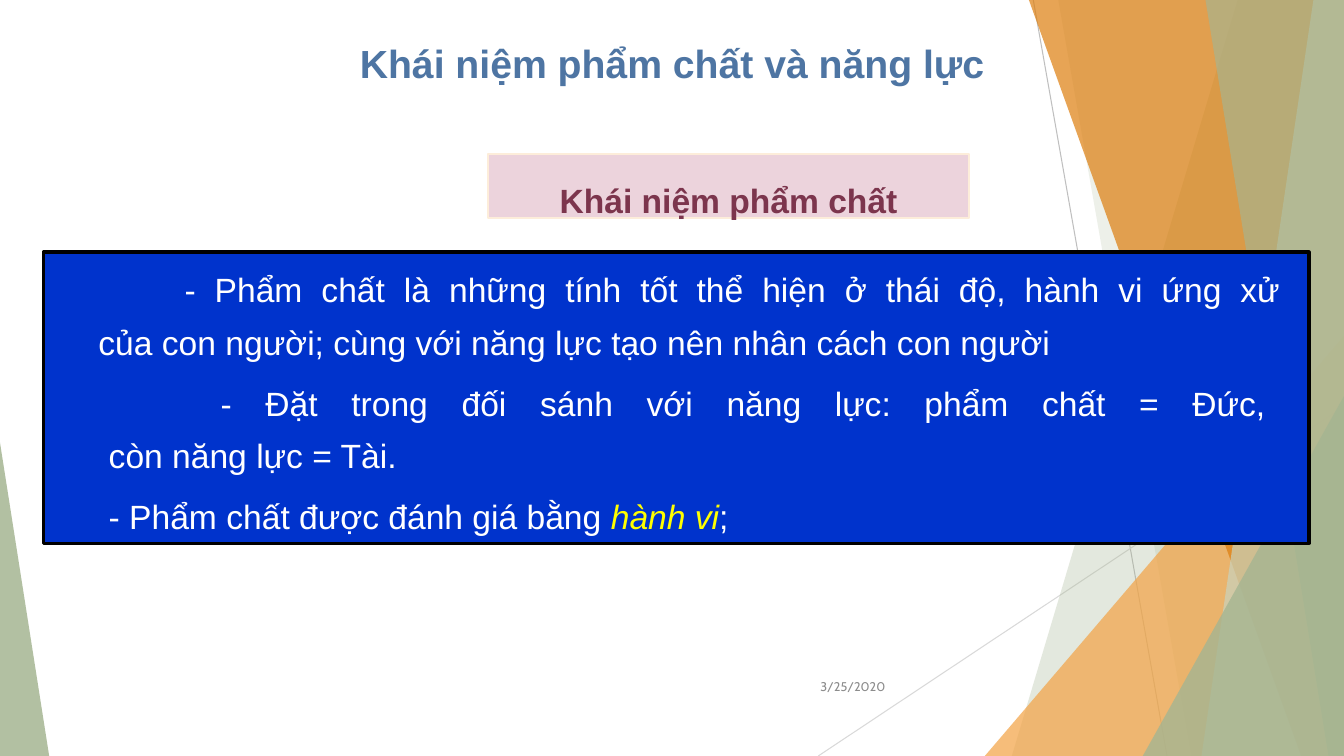
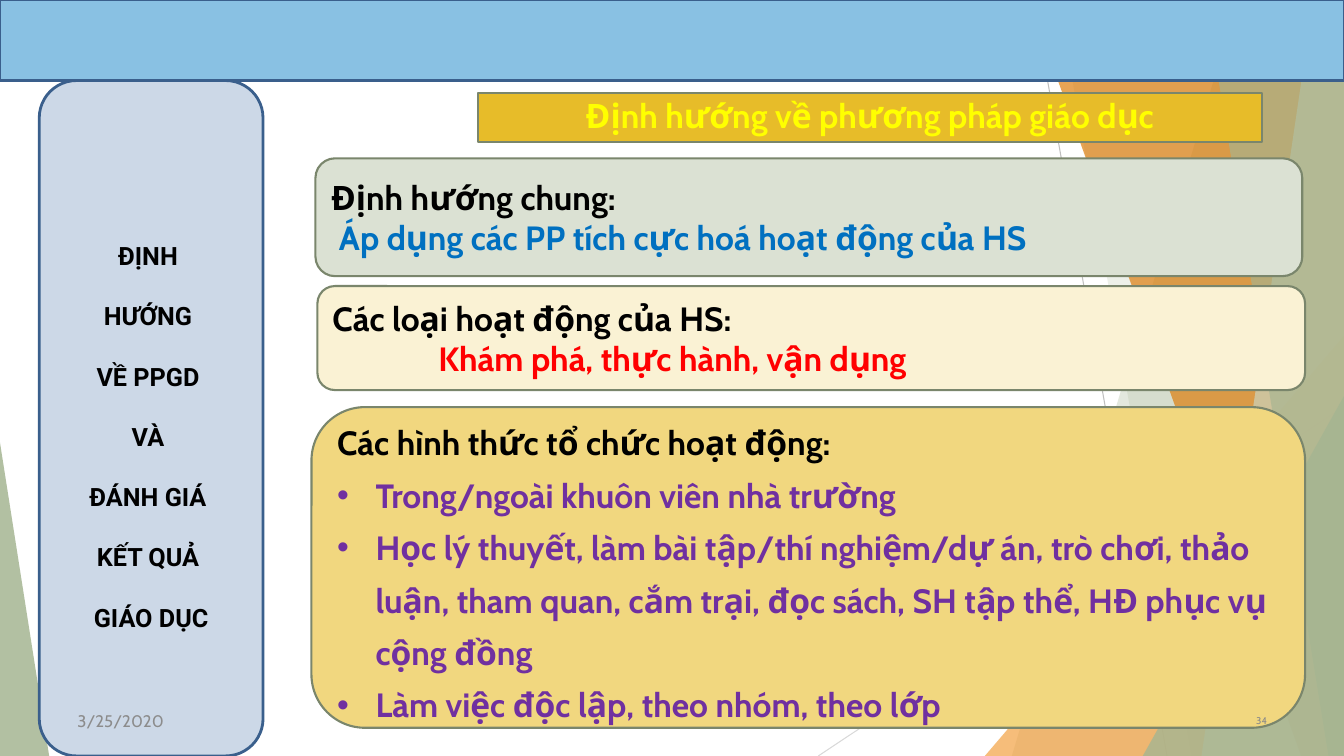
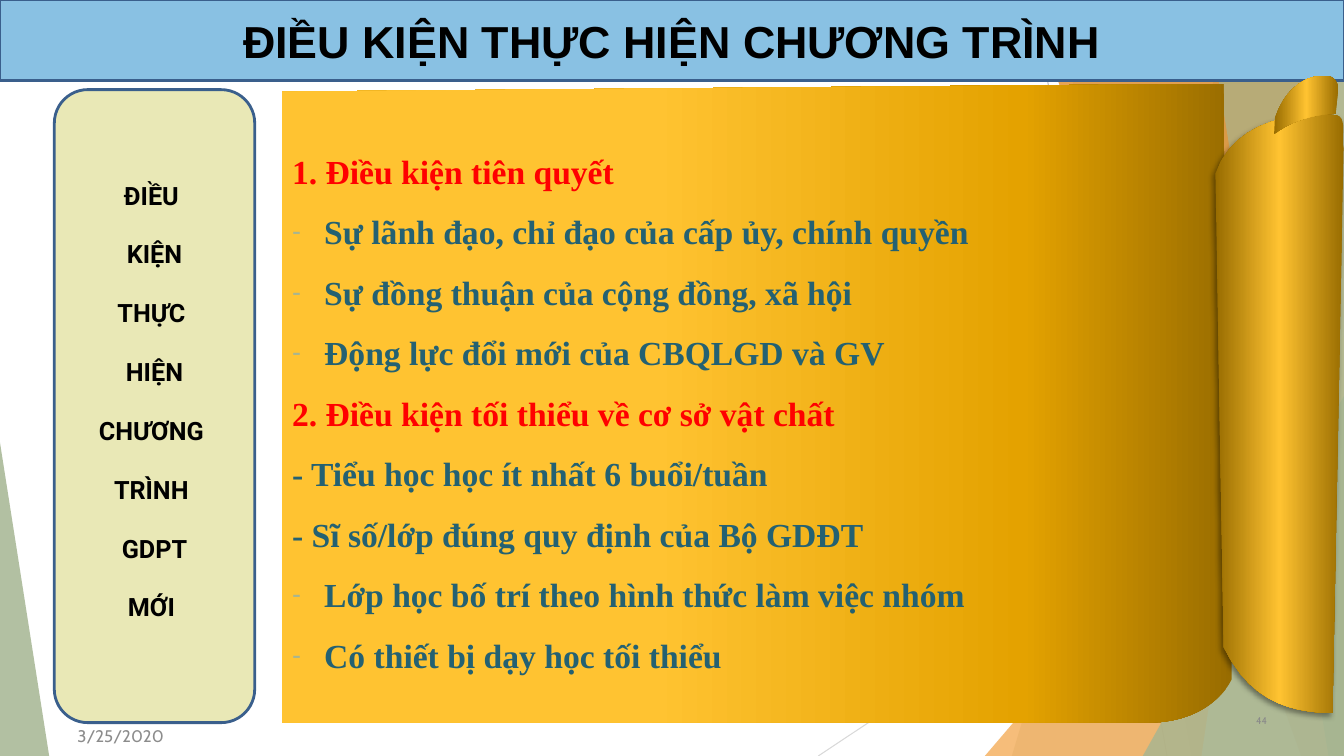
from lxml import etree
from pptx import Presentation
from pptx import util as u
from pptx.dml.color import RGBColor
from pptx.enum import shapes, text
from pptx.oxml.ns import qn

WIDTH, HEIGHT = 33.87, 19.05
GREEN, ORANGE, GOLD, BROWN = "A5B592", "F3A447", "FFC331", "986C00"
SKY, NAVY, OLIVE, PURPLE = "89C1E3", "3A5F8C", "7A866C", "7030A0"
BLACK, WHITE, RED, YELLOW, GREY, TEAL = "000000", "FFFFFF", "FF0000", "FFFF00", "8C8C8C", "246172"
LEFT, CENTER, RIGHT, JUSTIFY = (text.PP_ALIGN.LEFT, text.PP_ALIGN.CENTER,
                                text.PP_ALIGN.RIGHT, text.PP_ALIGN.JUSTIFY)
TOP, MIDDLE = text.MSO_ANCHOR.TOP, text.MSO_ANCHOR.MIDDLE
RECT, ROUND = shapes.MSO_SHAPE.RECTANGLE, shapes.MSO_SHAPE.ROUNDED_RECTANGLE
TRIANGLE = shapes.MSO_SHAPE.ISOSCELES_TRIANGLE
BAND = (0, 0, WIDTH, 2.03)


def rgb(value):
    return RGBColor.from_string(value)


def lengths(values):
    return [u.Cm(value) for value in values]


def add_xml(parent, tag, **attributes):
    return etree.SubElement(parent, qn(tag), {key: str(value) for key, value in attributes.items()})


def add_color(parent, color):
    return add_xml(parent, "a:srgbClr", val=color)


def flatten(outline, steps=12):
    """Turn points and (control, control, end) curves into a list of points."""
    points = []
    for part in outline:
        if not isinstance(part[0], tuple):
            points.append(part)
            continue
        corners = [points[-1], *part]
        for step in range(1, steps + 1):
            t = step / steps
            weights = ((1 - t) ** 3, 3 * t * (1 - t) ** 2, 3 * t * t * (1 - t), t ** 3)
            points.append(tuple(sum(w * corner[axis] for w, corner in zip(weights, corners))
                                for axis in (0, 1)))
    return points


class Deck:
    """Holds the shared style and the slide being built."""

    def __init__(self):
        self.presentation = Presentation()
        self.presentation.slide_width = u.Cm(WIDTH)
        self.presentation.slide_height = u.Cm(HEIGHT)
        self.slide = None

    def new_slide(self):
        layout = self.presentation.slide_layouts[1]
        self.slide = self.presentation.slides.add_slide(layout)

    # Text
    def put_text(self, shape, paragraphs, size=24, font="Arial", color=BLACK, bold=False,
                 anchor=MIDDLE, insets=(0.25, 0.13, 0.25, 0.13), **common):
        frame = shape.text_frame
        left, top, right, bottom = lengths(insets)
        frame_format = {"word_wrap": True, "auto_size": text.MSO_AUTO_SIZE.NONE,
                        "vertical_anchor": anchor, "margin_left": left, "margin_top": top,
                        "margin_right": right, "margin_bottom": bottom}
        for name, value in frame_format.items():
            setattr(frame, name, value)
        for number, (runs, options) in enumerate(paragraphs):
            paragraph = frame.paragraphs[0] if number == 0 else frame.add_paragraph()
            self.format_paragraph(paragraph, **{**common, **options})
            for content, changes in runs:
                if content == "\v":
                    paragraph.add_line_break()
                    continue
                run = paragraph.add_run()
                run.text = content
                style = {"name": font, "size": u.Pt(size), "bold": bold, "italic": False,
                         "color": color, **changes}
                run.font.color.rgb = rgb(style.pop("color"))
                for name, value in style.items():
                    setattr(run.font, name, value)

    def format_paragraph(self, paragraph, align=LEFT, line=1.0, before=0, after=0,
                         margin=0, indent=0, bullet=None, bullet_color=None, bullet_size=100):
        values = {"alignment": align, "line_spacing": line,
                  "space_before": u.Pt(before), "space_after": u.Pt(after)}
        for name, value in values.items():
            setattr(paragraph, name, value)
        properties = paragraph._p.get_or_add_pPr()
        properties.set("marL", str(u.Cm(margin)))
        properties.set("indent", str(u.Cm(indent)))
        if not bullet:
            add_xml(properties, "a:buNone")
            return
        if bullet_color:
            add_color(add_xml(properties, "a:buClr"), bullet_color)
        add_xml(properties, "a:buSzPct", val=bullet_size * 1000)
        add_xml(properties, "a:buFont", typeface="Arial")
        add_xml(properties, "a:buChar", char=bullet)

    # Shapes
    def paint(self, shape, fill, line=None, weight=1.5, alpha=100):
        shape.fill.solid()
        shape.fill.fore_color.rgb = rgb(fill)
        if alpha < 100:
            solid = shape._element.spPr.find(qn("a:solidFill"))
            add_xml(solid[0], "a:alpha", val=alpha * 1000)
        if line:
            shape.line.color.rgb = rgb(line)
            shape.line.width = u.Pt(weight)
        else:
            shape.line.fill.background()

    def box(self, kind, place, fill, line=None, weight=1.5, alpha=100):
        shape = self.slide.shapes.add_shape(kind, *lengths(place))
        self.paint(shape, fill, line, weight, alpha)
        shape.shadow.inherit = False
        return shape

    def triangle(self, place, fill, alpha, apex):
        shape = self.box(TRIANGLE, place, fill, alpha=alpha)
        shape.adjustments[0] = apex

    def outline(self, points, fill, alpha=100):
        start, *rest = [tuple(lengths(point)) for point in flatten(points)]
        builder = self.slide.shapes.build_freeform(*start)
        builder.add_line_segments(rest, close=True)
        shape = builder.convert_to_shape()
        self.paint(shape, fill, alpha=alpha)
        shape.shadow.inherit = False
        return shape

    def gradient(self, points, stops):
        shape = self.outline(points, stops[0][1])
        properties = shape._element.spPr
        solid = properties.find(qn("a:solidFill"))
        fill = etree.Element(qn("a:gradFill"), rotWithShape="1")
        stop_list = add_xml(fill, "a:gsLst")
        for position, color in stops:
            add_color(add_xml(stop_list, "a:gs", pos=position * 1000), color)
        add_xml(fill, "a:lin", ang=180 * 60000, scaled=0)
        properties.replace(solid, fill)
        return shape

    def drop_shadow(self, shape):
        effects = shape._element.spPr.find(qn("a:effectLst"))
        shadow = add_xml(effects, "a:outerShdw", blurRad=u.Pt(4), dist=u.Pt(3),
                         dir=135 * 60000, rotWithShape=0)
        add_xml(add_color(shadow, BLACK), "a:alpha", val=40000)

    def line(self, ends, color):
        connector = self.slide.shapes.add_connector(shapes.MSO_CONNECTOR.STRAIGHT, *lengths(ends))
        connector.line.color.rgb = rgb(color)
        connector.line.width = u.Pt(0.75)
        add_xml(connector._element.spPr, "a:effectLst")

    def placeholder(self, index, place, geometry="rect"):
        """Move a template placeholder and bring it to the front."""
        shape = self.slide.placeholders[index]
        for name, value in zip(("left", "top", "width", "height"), lengths(place)):
            setattr(shape, name, value)
        outline = add_xml(shape._element.spPr, "a:prstGeom", prst=geometry)
        add_xml(outline, "a:avLst")
        self.slide.shapes._spTree.append(shape._element)
        return shape

    # Shared parts
    def backdrop(self):
        """Draw the slanted bands and hand them to the slide master."""
        first = len(self.slide.shapes)
        self.line((26.04, 0, 29.41, HEIGHT), "BFBFBF")
        self.line((WIDTH, 10.24, 20.62, HEIGHT), "D9D9D9")
        self.slant(31.19, 25.5, GREEN, 30)
        self.slant(26.67, 30.02, GREEN, 20)
        self.triangle((24.82, 8.46, 9.05, 10.59), ORANGE, 72, 1)
        self.slant(25.93, 32.79, "DD7E0E", 70)
        self.slant(33.1, 30.28, "C9D3BE", 70)
        self.slant(30.38, 33.48, GREEN, 65)
        self.triangle((28.8, 9.98, 5.07, 9.07), GREEN, 80, 1)
        self.triangle((0, 11.15, 1.24, 7.9), GREEN, 85, 0)
        master = self.presentation.slide_master.shapes._spTree
        for number, shape in enumerate(list(self.slide.shapes)[first:], 101):
            shape._element.xpath(".//p:cNvPr")[0].set("id", str(number))
            master.append(shape._element)

    def slant(self, top, bottom, fill, alpha):
        self.outline([(top, 0), (WIDTH, 0), (WIDTH, HEIGHT), (bottom, HEIGHT)], fill, alpha)

    def sidebar(self, place, fill, words, pitch, insets):
        shape = self.box(ROUND, place, fill, NAVY, 2)
        self.put_text(shape, [plain(word) for word in words], size=18, font="Roboto", bold=True,
                      insets=insets, align=CENTER, line=u.Pt(pitch), before=6, after=6)

    def small_text(self, content, place, size=12, color=GREY, align=LEFT):
        shape = self.slide.shapes.add_textbox(*lengths(place))
        self.put_text(shape, [plain(content)], size=size, font="Cabin", color=color, align=align)

    def page_number(self, content):
        self.small_text(content, (24.28, 17.65, 7.9, 1.02), 7, "898989", RIGHT)


def plain(content, color=None, **options):
    """One paragraph of one run."""
    return [(content, {"color": color} if color else {})], options


def quality_slide(deck):
    deck.small_text("3/25/2020", (20.02, 16.79, 2.54, 1.02), 9, align=RIGHT)
    title = deck.placeholder(0, (0, 0.86, WIDTH, 1.45))
    deck.put_text(title, [plain("Khái niệm phẩm chất và năng lực")], size=28, color="4E75A3",
                  bold=True, anchor=TOP, align=CENTER)

    # Definition
    body = deck.placeholder(1, (1.09, 6.35, 31.9, 7.34))
    deck.paint(body, "0033CC", BLACK, 2.25)
    deck.put_text(body, [
        ([("- Phẩm chất là những tính tốt thể hiện ở thái độ, hành vi ứng xử ", {}), ("\v", {}),
          ("của con người; cùng với năng lực tạo nên nhân cách con người", {})],
         {"margin": 1.14, "indent": 2.17}),
        ([("- Đặt trong đối sánh với năng lực: phẩm chất = Đức, ", {}), ("\v", {}),
          ("còn năng lực = Tài.", {})], {"margin": 1.4, "indent": 2.82}),
        ([("- Phẩm chất được đánh giá bằng ", {}),
          ("hành vi", {"color": YELLOW, "italic": True}), (";", {})], {"margin": 1.4}),
    ], color=WHITE, anchor=TOP, align=JUSTIFY, line=1.3, before=6)

    # Heading label
    label = deck.box(RECT, (12.29, 3.89, 12.14, 1.6), "ECD3DC", "FDEDDA")
    deck.put_text(label, [plain("Khái niệm phẩm chất")], color="7C354D", bold=True, anchor=TOP,
                  align=CENTER, line=1.5, before=2, after=6)


def method_slide(deck):
    style = {"font": "Cabin", "bold": True}
    deck.box(RECT, BAND, SKY, NAVY, 2)
    deck.sidebar((0.99, 2.03, 5.64, 17.02), "CCD8E7",
                 ["ĐỊNH ", "HƯỚNG ", "VỀ PPGD ", "VÀ ", "ĐÁNH GIÁ ", "KẾT QUẢ ", "GIÁO DỤC"],
                 31, (0, 0.71, 0, 0.13))

    # Title and general direction
    title = deck.placeholder(0, (12.04, 2.34, 19.76, 1.24), "roundRect")
    deck.paint(title, "E7BC29", OLIVE)
    deck.put_text(title, [plain("Định hướng về phương pháp giáo dục")], color=YELLOW,
                  align=CENTER, line=0.9, before=10, **style)
    cards = [
        ((7.95, 3.99, 24.87, 2.97), "DBE1D3", "Định hướng chung:",
         "Áp dụng các PP tích cực hoá hoạt động của HS", "0070C0", 0.2),
        ((8, 7.21, 24.89, 2.62), "FAF2D4", "Các loại hoạt động của HS:",
         "Khám phá, thực hành, vận dụng", RED, 2.67),
    ]
    for place, fill, heading, detail, color, indent in cards:
        card = deck.box(ROUND, place, fill, OLIVE)
        deck.put_text(card, [plain(heading), plain(detail, color, indent=indent)], **style)

    # Forms of activity
    forms = ["Trong/ngoài khuôn viên nhà trường",
             "Học lý thuyết, làm bài tập/thí nghiệm/dự án, trò chơi, thảo luận, tham quan, "
             "cắm trại, đọc sách, SH tập thể, HĐ phục vụ cộng đồng",
             "Làm việc độc lập, theo nhóm, theo lớp"]
    body = deck.placeholder(1, (7.85, 10.26, 25.04, 8.08), "roundRect")
    deck.paint(body, "F1D77F", OLIVE)
    deck.put_text(body, [plain("Các hình thức tổ chức hoạt động:")]
                  + [plain(form, PURPLE, margin=0.97, indent=-0.97, bullet="•") for form in forms],
                  line=1.3, **style)
    deck.small_text("3/25/2020", (1.7, 17.65, 7.9, 1.02))
    deck.page_number("34")


def condition_slide(deck):
    title = deck.placeholder(0, BAND)
    deck.paint(title, SKY, NAVY, 2)
    deck.put_text(title, [plain("ĐIỀU KIỆN THỰC HIỆN CHƯƠNG TRÌNH")], size=32, bold=True,
                  align=CENTER)
    deck.sidebar((1.37, 2.26, 5.05, 15.95), "E9E8B6",
                 ["ĐIỀU ", "KIỆN", "THỰC ", "HIỆN", "CHƯƠNG ", "TRÌNH ", "GDPT", "MỚI "],
                 30, (0, 0.13, 0, 0.69))

    # Scroll: sheet, roll and curl
    deck.gradient([(7.11, 2.31), (7.11, 18.21), (29.01, 18.21),
                   ((30.15, 18.19), (30.81, 17.6), (31.04, 17.12)),
                   ((31.04, 12.09), (30.84, 7.14), (30.84, 2.11))],
                  [(0, BROWN), (22, "E4A200"), (61, GOLD), (100, GOLD)])
    rolled = [(0, BROWN), (50, GOLD), (100, BROWN)]
    roll = deck.gradient([(33.58, 17.98), ((32.82, 17.93), (31.6, 17.88), (30.84, 16.31)),
                          (30.63, 4.37), ((31.14, 2.97), (32.79, 2.82), (33.63, 2.9)),
                          ((33.99, 2.92), (33.78, 3.45), (33.86, 3.73))], rolled)
    deck.drop_shadow(roll)
    deck.gradient([(32.11, 3.38), (32.13, 2.97), ((32.49, 1.96), (33.2, 1.88), (33.45, 1.91)),
                   ((33.58, 1.93), (33.71, 2.03), (33.73, 2.21)), (33.66, 2.87),
                   ((33.28, 2.87), (32.64, 2.97), (32.11, 3.38))], rolled)

    # Conditions
    dash = {"margin": 0.81, "indent": -0.81, "bullet": "-", "bullet_color": GREEN,
            "bullet_size": 80}
    body = deck.placeholder(1, (7.11, 2.11, 23.93, 16.08))
    deck.put_text(body, [
        plain("1. Điều kiện tiên quyết", RED),
        plain("Sự lãnh đạo, chỉ đạo của cấp ủy, chính quyền", **dash),
        plain("Sự đồng thuận của cộng đồng, xã hội", **dash),
        plain("Động lực đổi mới của CBQLGD và GV", **dash),
        plain("2. Điều kiện tối thiểu về cơ sở vật chất", RED),
        plain("- Tiểu học học ít nhất 6 buổi/tuần"),
        plain("- Sĩ số/lớp đúng quy định của Bộ GDĐT"),
        plain("Lớp học bố trí theo hình thức làm việc nhóm", **dash),
        plain("Có thiết bị dạy học tối thiểu", **dash),
    ], font="Times New Roman", color=TEAL, bold=True, align=JUSTIFY, line=1.5)
    deck.small_text("3/25/2020", (1.7, 18.03, 7.9, 1.02))
    deck.page_number("44")


def main():
    deck = Deck()
    for number, build in enumerate((quality_slide, method_slide, condition_slide)):
        deck.new_slide()
        if number == 0:
            deck.backdrop()
        build(deck)
    deck.presentation.save("out.pptx")


if __name__ == "__main__":
    main()
